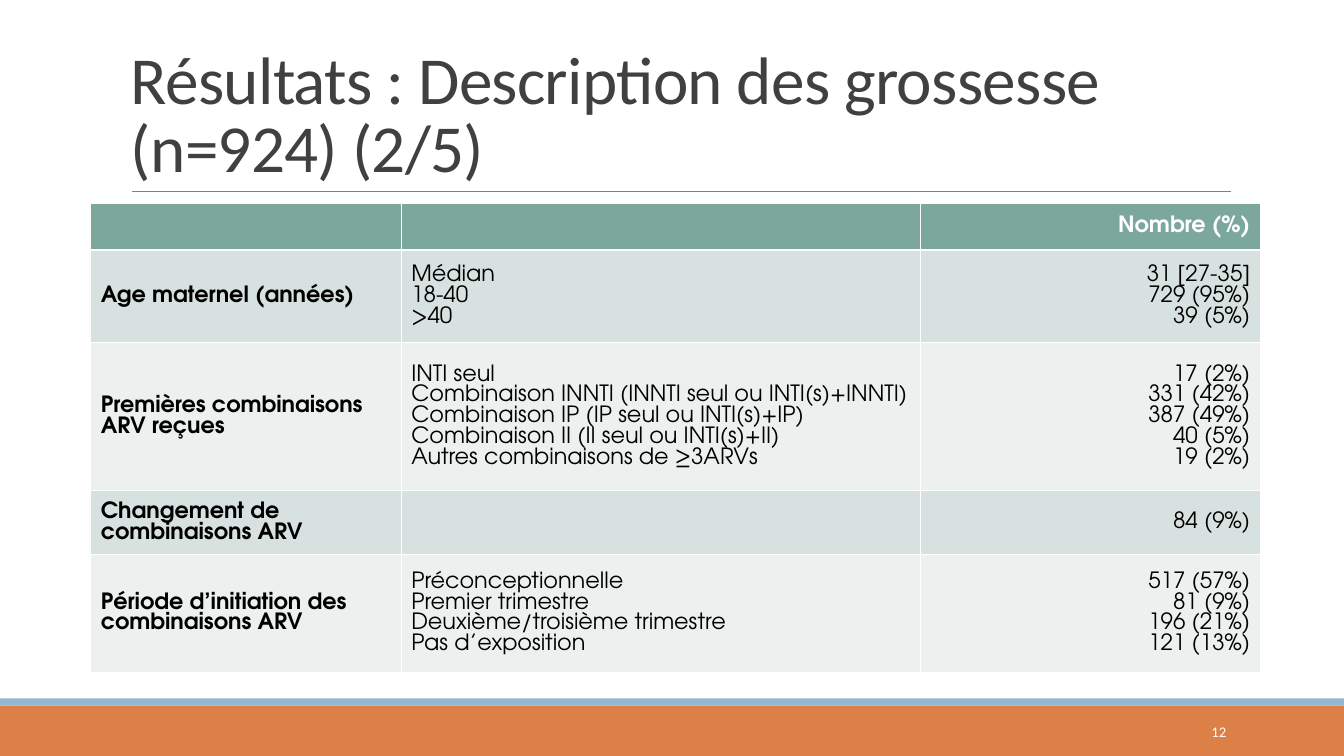
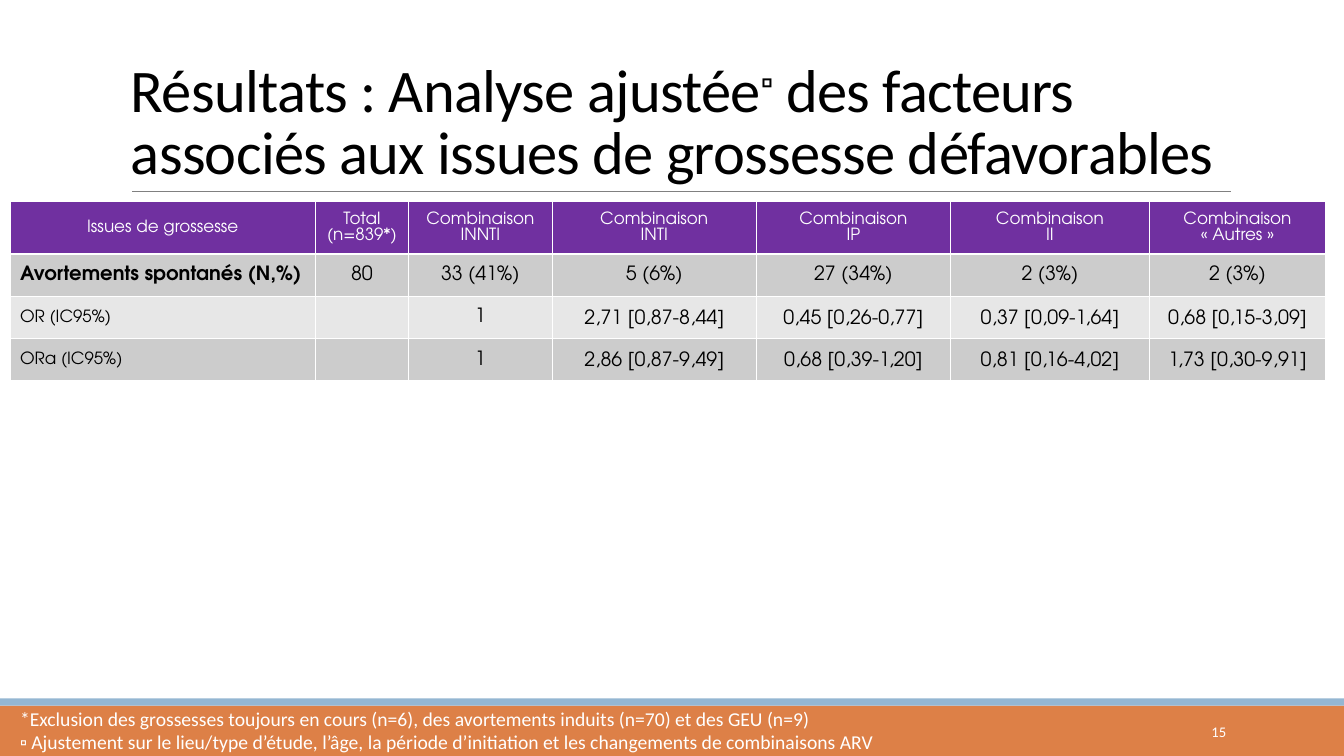
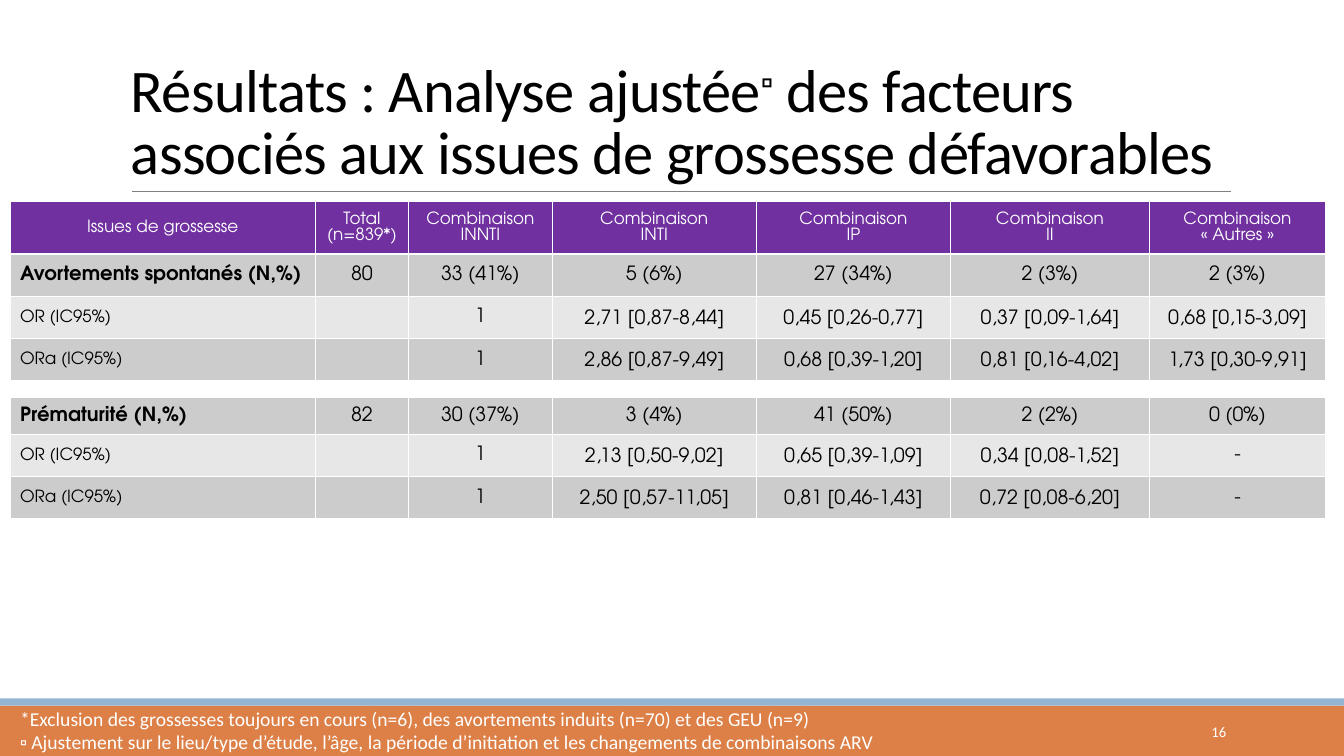
from pptx import Presentation
from pptx.dml.color import RGBColor
from pptx.enum import shapes, text
from pptx.util import Inches, Pt
from lxml import etree

BODY_FONT = "Calibri"
TABLE_FONT = "TeX Gyre Adventor"
WHITE, BLACK, DARK, RULE = "FFFFFF", "000000", "404040", "808080"
BANDS = [(7, 0.5, "DD8047"), (6.93, 0.07, "94B6D2")]
GREEN, GREEN_BANDS = "7BA79D", ("D7E1DF", "ECF1EF")
PURPLE, GREY_BANDS = "7030A0", ("CCCCCC", "E7E7E7")
LEFT, CENTER, RIGHT = text.PP_ALIGN.LEFT, text.PP_ALIGN.CENTER, text.PP_ALIGN.RIGHT
MIDDLE, BOTTOM, TOP = text.MSO_ANCHOR.MIDDLE, text.MSO_ANCHOR.BOTTOM, text.MSO_ANCHOR.TOP

PREGNANCY_TITLE = ["Résultats : Description des grossesse (n=924) (2/5)"]
PREGNANCY_COLUMNS = [3.08, 5.15, 3.37]
PREGNANCY_HEIGHTS = [0.46, 0.92, 1.47, 0.52, 0.92]
PREGNANCY_ROWS = [
    ("", "", "Nombre (%)"),
    ("Age maternel (années)", "Médian\n18-40\n>40", "31 [27-35]\n729 (95%)\n39 (5%)"),
    (
        "Premières combinaisons ARV reçues",
        "INTI seul\nCombinaison INNTI (INNTI seul ou INTI(s)+INNTI)\n"
        "Combinaison IP (IP seul ou INTI(s)+IP)\nCombinaison II (II seul ou INTI(s)+II)\n"
        "Autres combinaisons de ≥3ARVs",
        "17 (2%)\n331 (42%)\n387 (49%)\n40 (5%)\n19 (2%)",
    ),
    ("Changement de combinaisons ARV", "", "84 (9%)"),
    (
        "Période d’initiation des combinaisons ARV",
        "Préconceptionnelle\nPremier trimestre\nDeuxième/troisième trimestre\nPas d’exposition",
        "517 (57%)\n81 (9%)\n196 (21%)\n121 (13%)",
    ),
]

OUTCOME_TITLE = [
    "Résultats : Analyse ajustée", "▫", " des facteurs associés aux issues de grossesse défavorables",
]
OUTCOME_COLUMNS = [3.03, 0.92, 1.43, 2.02, 1.93, 1.97, 1.75]
OUTCOME_HEADER = [
    "Issues de grossesse", "Total\n(n=839*)", "Combinaison\nINNTI", "Combinaison\nINTI",
    "Combinaison\nIP", "Combinaison\nII", "Combinaison\n« Autres »",
]
HEADER_HEIGHT, RATIO_HEIGHT, SPACER_HEIGHT = 0.52, 0.42, 0.16
MISCARRIAGE = (0.42, [
    ("Avortements spontanés (N,%)", "80", "33 (41%)", "5 (6%)", "27 (34%)", "2 (3%)", "2 (3%)"),
    ("OR (IC95%)", "", "1", "2,71 [0,87-8,44]", "0,45 [0,26-0,77]", "0,37 [0,09-1,64]", "0,68 [0,15-3,09]"),
    ("ORa (IC95%)", "", "1", "2,86 [0,87-9,49]", "0,68 [0,39-1,20]", "0,81 [0,16-4,02]", "1,73 [0,30-9,91]"),
])
PREMATURITY = (0.37, [
    ("Prématurité (N,%)", "82", "30 (37%)", "3 (4%)", "41 (50%)", "2 (2%)", "0 (0%)"),
    ("OR (IC95%)", "", "1", "2,13 [0,50-9,02]", "0,65 [0,39-1,09]", "0,34 [0,08-1,52]", "-"),
    ("ORa (IC95%)", "", "1", "2,50 [0,57-11,05]", "0,81 [0,46-1,43]", "0,72 [0,08-6,20]", "-"),
])
OUTCOME_PAGES = [("15", [MISCARRIAGE]), ("16", [MISCARRIAGE, PREMATURITY])]
FOOTNOTES = [
    "*Exclusion des grossesses toujours en cours (n=6), des avortements induits (n=70) et des GEU (n=9)",
    "▫ Ajustement sur le lieu/type d’étude, l’âge, la période d’initiation et les changements de combinaisons ARV",
]


def color(code):
    return RGBColor.from_string(code)


def paint(target, code):
    target.fill.solid()
    target.fill.fore_color.rgb = color(code)


def style(para, size, code, font=BODY_FONT, bold=False, align=LEFT):
    para.font.size = Pt(size)
    para.font.name = font
    para.font.bold = bold
    para.font.color.rgb = color(code)
    para.alignment = align


def add_text(page, place, lines, size, code, anchor, align=LEFT):
    frame = page.shapes.add_textbox(*map(Inches, place)).text_frame
    frame.word_wrap = True
    frame.vertical_anchor = anchor
    frame.text = "\n".join(lines)
    for para in frame.paragraphs:
        style(para, size, code, align=align)
    return frame


def add_title(page, parts, size, code):
    para = add_text(page, (1.2, 0.31, 11, 1.59), [], size, code, BOTTOM).paragraphs[0]
    para.line_spacing = 0.85
    for part in parts:
        span = para.add_run()
        span.text = part
        properties = span._r.get_or_add_rPr()
        properties.set("spc", "-50")
        if part == "▫":
            properties.set("baseline", "30000")


def add_page(deck, title, size, code, number):
    page = deck.slides.add_slide(deck.slide_layouts[6])
    for top, height, fill in BANDS:
        band = page.shapes.add_shape(
            shapes.MSO_SHAPE.RECTANGLE, 0, Inches(top), deck.slide_width, Inches(height)
        )
        band.shadow.inherit = False
        paint(band, fill)
        band.line.fill.background()
    rule = page.shapes.add_connector(
        shapes.MSO_CONNECTOR.STRAIGHT, Inches(1.31), Inches(1.9), Inches(12.21), Inches(1.9)
    )
    rule.line.color.rgb = color(RULE)
    rule.line.width = Pt(0.5)
    namespace = "{http://schemas.openxmlformats.org/drawingml/2006/main}"
    etree.SubElement(rule._element.spPr, namespace + "effectLst")
    add_title(page, title, size, code)
    add_text(page, (10.83, 7.06, 1.43, 0.4), [number], 10.5, WHITE, MIDDLE, RIGHT)
    return page


def add_table(page, left, top, columns, heights):
    place = map(Inches, (left, top, sum(columns), sum(heights)))
    table = page.shapes.add_table(len(heights), len(columns), *place).table
    table.horz_banding = False
    for column, width in zip(table.columns, columns):
        column.width = Inches(width)
    for row, height in zip(table.rows, heights):
        row.height = Inches(height)
    return table


def fill_cell(cell, content, fill, size, code=BLACK, bold=False, align=LEFT):
    paint(cell, fill)
    cell.vertical_anchor = MIDDLE
    cell.text = content
    for para in cell.text_frame.paragraphs:
        style(para, size, code, TABLE_FONT, bold, align)
        if size == 14 and "[" in content:
            para.line_spacing = 1.15


def add_pregnancy_page(deck):
    page = add_page(deck, PREGNANCY_TITLE, 48, DARK, "12")
    table = add_table(page, 0.9, 2.02, PREGNANCY_COLUMNS, PREGNANCY_HEIGHTS)
    for r, row in enumerate(PREGNANCY_ROWS):
        fill = GREEN_BANDS[(r - 1) % 2] if r else GREEN
        for c, content in enumerate(row):
            fill_cell(
                table.cell(r, c), content, fill, 16, BLACK if r else WHITE,
                bold=r == 0 or c == 0, align=RIGHT if c == 2 else LEFT,
            )


def add_outcome_page(deck, number, outcomes):
    page = add_page(deck, OUTCOME_TITLE, 43.2, BLACK, number)
    heights = [HEADER_HEIGHT]
    for count_height, _ in outcomes:
        heights += [count_height, RATIO_HEIGHT, RATIO_HEIGHT, SPACER_HEIGHT]
    table = add_table(page, 0.1, 2, OUTCOME_COLUMNS, heights)
    for c, content in enumerate(OUTCOME_HEADER):
        fill_cell(table.cell(0, c), content, PURPLE, 12, WHITE, align=CENTER)
    for block, (_, rows) in enumerate(outcomes):
        first = 1 + 4 * block
        for r, row in enumerate(rows):
            for c, content in enumerate(row):
                fill_cell(
                    table.cell(first + r, c), content, GREY_BANDS[r % 2],
                    12 if r and c == 0 else 14,
                    bold=r == 0 and c == 0, align=CENTER if c else LEFT,
                )
        for c in range(len(OUTCOME_COLUMNS)):
            spacer = table.cell(first + 3, c)
            spacer.margin_top = spacer.margin_bottom = 0
            fill_cell(spacer, "", WHITE, 6)
    add_text(page, (0.1, 6.96, 10.29, 0.88), FOOTNOTES, 14, WHITE, TOP)


def main():
    deck = Presentation()
    deck.slide_width, deck.slide_height = Inches(13.33), Inches(7.5)
    add_pregnancy_page(deck)
    for number, outcomes in OUTCOME_PAGES:
        add_outcome_page(deck, number, outcomes)
    deck.save("out.pptx")


if __name__ == "__main__":
    main()
